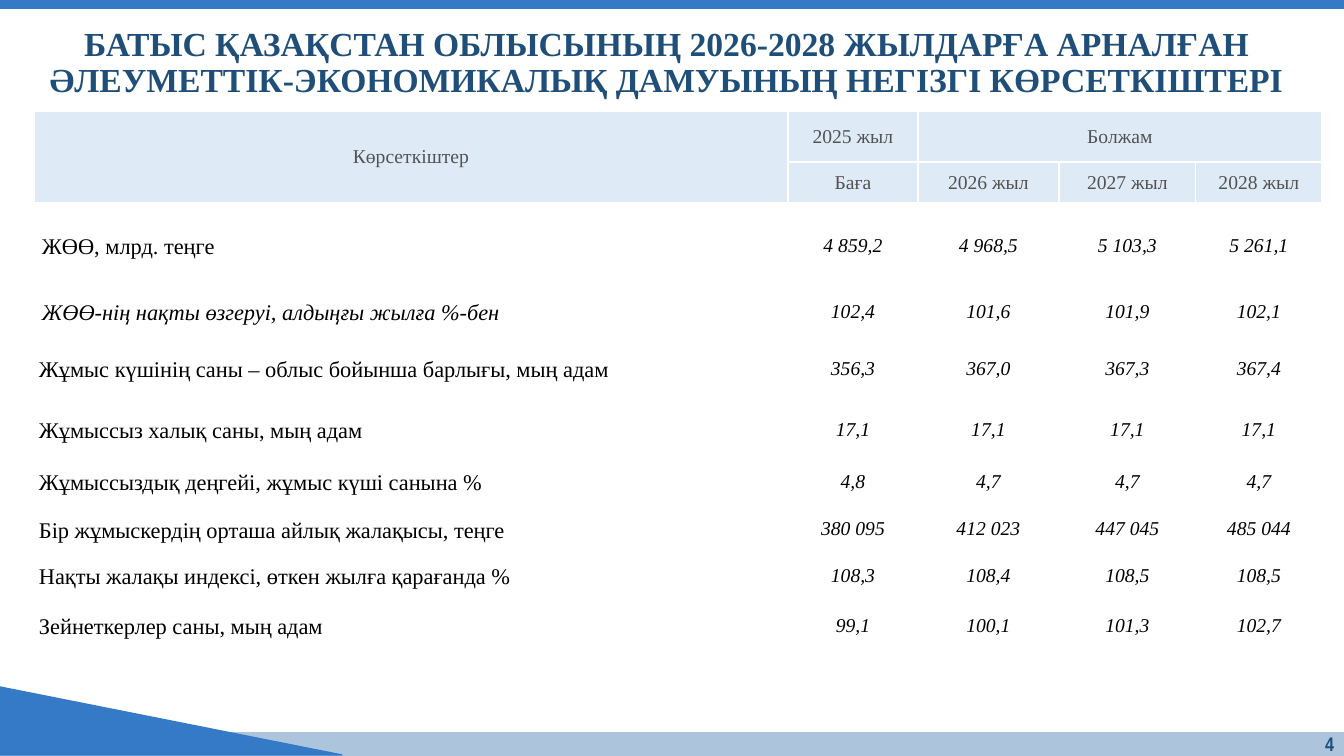
"""Build the slide of regional development indicators for 2026-2028."""
from dataclasses import dataclass

from lxml import etree
from pptx import Presentation
from pptx import util as u
from pptx.dml.color import RGBColor
from pptx.enum import shapes, text
from pptx.oxml import ns

TITLE = (
    "БАТЫС ҚАЗАҚСТАН ОБЛЫСЫНЫҢ 2026-2028 ЖЫЛДАРҒА АРНАЛҒАН",
    "ӘЛЕУМЕТТІК-ЭКОНОМИКАЛЫҚ ДАМУЫНЫҢ НЕГІЗГІ КӨРСЕТКІШТЕРІ",
)
HEAD = (
    ("Көрсеткіштер", "2025 жыл", "Болжам", None, None),
    (None, "Баға", "2026 жыл", "2027 жыл", "2028 жыл"),
)
DATA = (
    ("ЖӨӨ, млрд. теңге", "4 859,2", "4 968,5", "5 103,3", "5 261,1"),
    ("ЖӨӨ-нің нақты өзгеруі, алдыңғы жылға %-бен", "102,4", "101,6", "101,9", "102,1"),
    ("Жұмыс күшінің саны – облыс бойынша барлығы, мың адам", "356,3", "367,0", "367,3", "367,4"),
    ("Жұмыссыз халық саны, мың адам", "17,1", "17,1", "17,1", "17,1"),
    ("Жұмыссыздық деңгейі, жұмыс күші санына %", "4,8", "4,7", "4,7", "4,7"),
    ("Бір жұмыскердің орташа айлық жалақысы, теңге", "380 095", "412 023", "447 045", "485 044"),
    ("Нақты жалақы индексі, өткен жылға қарағанда %", "108,3", "108,4", "108,5", "108,5"),
    ("Зейнеткерлер саны, мың адам", "99,1", "100,1", "101,3", "102,7"),
)
GDP_ROWS = 2
SLOPE_ROW = 1
PAGE = "4"
WIDE, HIGH = 1344, 756
COLS = (754, 130, 141, 137, 126)
ROWS = (51, 41, 84, 49, 65, 56, 48, 48, 45, 55)


@dataclass(frozen=True)
class Theme:
    """Colours, fonts and type sizes."""
    blue: str = "347AC6"
    pale: str = "ACC5DC"
    navy: str = "1F4E79"
    grey: str = "525252"
    black: str = "000000"
    white: str = "FFFFFF"
    head: str = "DEEBF7"
    serif: str = "Times New Roman"
    narrow: str = "Arial Narrow"
    big: int = 24
    label: int = 16
    small: int = 14


LOOK = Theme()
BANDS = (
    (shapes.MSO_SHAPE.RECTANGLE, (0, 733, WIDE, 23), LOOK.pale),
    (shapes.MSO_SHAPE.RIGHT_TRIANGLE, (0, 687, 342, 68), LOOK.blue),
    (shapes.MSO_SHAPE.RECTANGLE, (0, -2, WIDE, 10), LOOK.blue),
)


def px(num):
    """Turn pixels into EMU."""
    return u.Emu(round(num * 914400 / 100.8))


def style(para, size, color, face=LOOK.serif, bold=False, slant=False,
          align=text.PP_ALIGN.CENTER, lead=None):
    """Format one paragraph."""
    font = para.font
    font.name, font.size, font.bold, font.italic = face, u.Pt(size), bold, slant
    font.color.rgb = RGBColor.from_string(color)
    para.alignment = align
    if lead:
        para.line_spacing = lead


def add_band(slide, kind, box, color):
    """Draw one decorative band."""
    band = slide.shapes.add_shape(kind, *map(px, box))
    band.shadow.inherit = False
    band.fill.solid()
    band.fill.fore_color.rgb = band.line.color.rgb = RGBColor.from_string(color)
    band.line.width = u.Pt(1)


def add_title(slide):
    """Fill the title placeholder."""
    title = slide.shapes.title
    title.left, title.top, title.width, title.height = map(px, (16, 28, 1301, 71))
    frame = title.text_frame
    frame.text = "\n".join(TITLE)
    frame.auto_size = text.MSO_AUTO_SIZE.NONE
    frame.vertical_anchor = text.MSO_ANCHOR.MIDDLE
    for para in frame.paragraphs:
        style(para, LOOK.big, LOOK.navy, bold=True, lead=0.9)


def set_cell(cell, words, pads):
    """Write a cell and return its paragraph."""
    cell.vertical_anchor = text.MSO_ANCHOR.MIDDLE
    cell.margin_left, cell.margin_top, cell.margin_right, cell.margin_bottom = map(px, pads)
    cell.text = words or ""
    return cell.text_frame.paragraphs[0]


def set_edges(cell):
    """Give a cell thin white borders."""
    props = cell._tc.get_or_add_tcPr()
    for side in ("lnL", "lnR", "lnT", "lnB"):
        line = etree.SubElement(props, ns.qn("a:" + side), w=str(u.Pt(1)))
        fill = etree.SubElement(line, ns.qn("a:solidFill"))
        etree.SubElement(fill, ns.qn("a:srgbClr"), val=LOOK.white)


def add_table(slide):
    """Lay out the indicator table."""
    box = (34, 111, sum(COLS), sum(ROWS))
    grid = slide.shapes.add_table(len(ROWS), len(COLS), *map(px, box)).table
    grid.first_row = grid.horz_banding = False
    for col, size in zip(grid.columns, COLS):
        col.width = px(size)
    for row, size in zip(grid.rows, ROWS):
        row.height = px(size)
    for r, row in enumerate(HEAD):
        for c, words in enumerate(row):
            cell = grid.cell(r, c)
            style(set_cell(cell, words, (0, 0, 0, 0)), LOOK.small, LOOK.grey)
            set_edges(cell)
            cell.fill.solid()
            cell.fill.fore_color.rgb = RGBColor.from_string(LOOK.head)
    grid.cell(0, 0).merge(grid.cell(1, 0))
    grid.cell(0, 2).merge(grid.cell(0, 4))
    for r, (name, *nums) in enumerate(DATA):
        cells = [grid.cell(r + len(HEAD), c) for c in range(len(COLS))]
        pads = (8, 0, 0, 0) if r < GDP_ROWS else (5, 0, 5, 0)
        style(set_cell(cells[0], name, pads), LOOK.label, LOOK.black,
              slant=r == SLOPE_ROW, align=text.PP_ALIGN.LEFT, lead=1.15)
        for cell, num in zip(cells[1:], nums):
            style(set_cell(cell, num, (1, 1, 1, 0)), LOOK.small, LOOK.black, slant=True)
        for cell in cells:
            cell.fill.background()


def add_page(slide):
    """Place the page number."""
    frame = slide.shapes.add_textbox(*map(px, (1272, 732, 72, 27))).text_frame
    frame.word_wrap = True
    frame.vertical_anchor = text.MSO_ANCHOR.MIDDLE
    frame.text = PAGE
    style(frame.paragraphs[0], LOOK.small, LOOK.navy, LOOK.narrow, bold=True,
          align=text.PP_ALIGN.RIGHT, lead=0.9)


def main():
    """Assemble and save the deck."""
    deck = Presentation()
    deck.slide_width, deck.slide_height = px(WIDE), px(HIGH)
    slide = deck.slides.add_slide(deck.slide_layouts.get_by_name("Title Only"))
    for band in BANDS:
        add_band(slide, *band)
    add_title(slide)
    add_table(slide)
    add_page(slide)
    deck.save("out.pptx")


if __name__ == "__main__":
    main()
